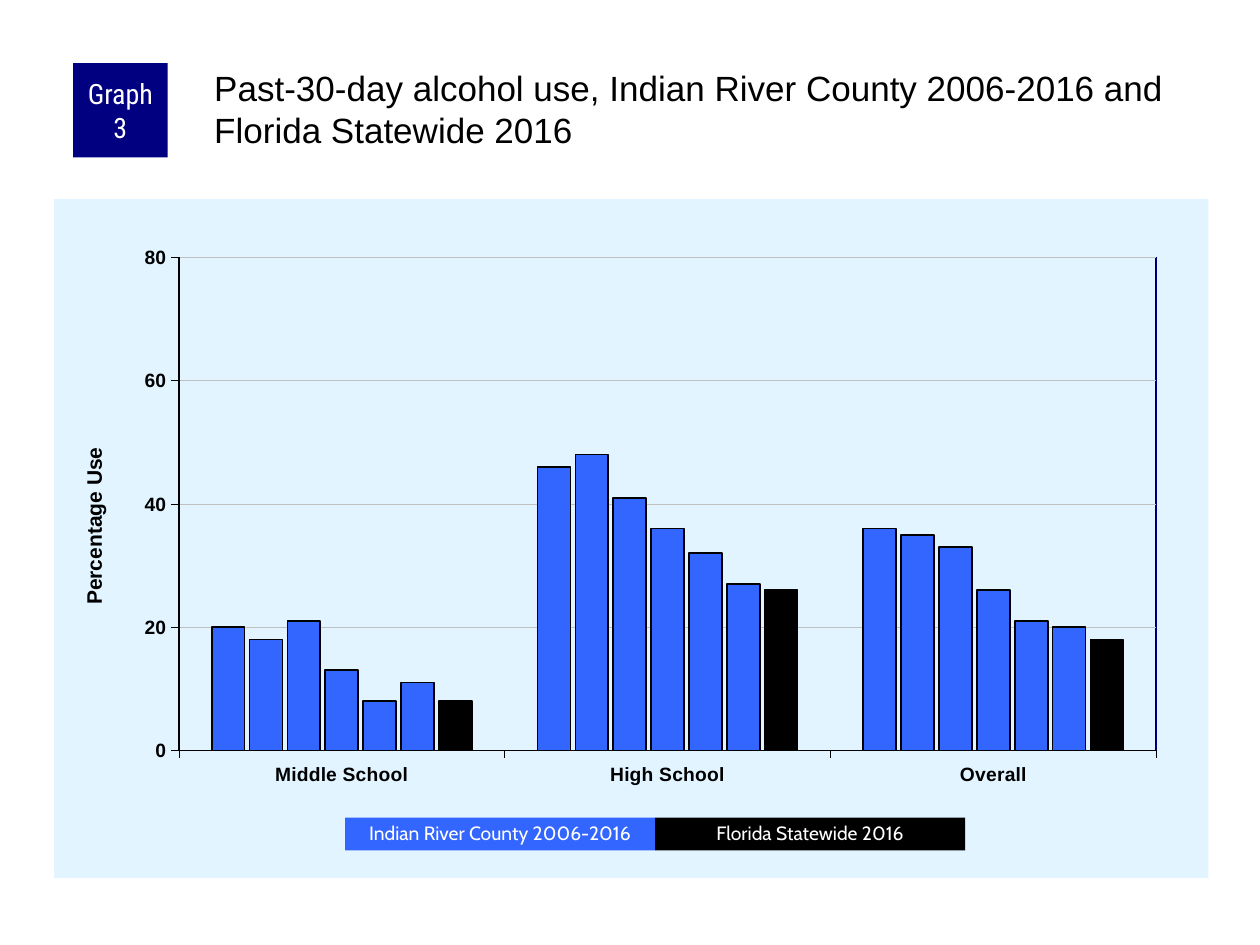
from lxml import etree
from pptx import Presentation
from pptx import util as u
from pptx.chart.data import CategoryChartData
from pptx.dml.color import RGBColor
from pptx.enum import chart as ch, shapes, text
from pptx.oxml import parse_xml
from pptx.oxml.ns import nsdecls, qn

W, H = 10, 7.5
CHART = (0.43, 1.58, 9.16, 5.39)
PLOT = (0.108, 0.086, 0.847, 0.726)
BLUE, BLACK, NAVY, PALE = "3366FF", "000000", "000080", "E1F4FF"
CATEGORIES = ["Middle School", "High School", "Overall"]
VALUES = [(20, 46, 36), (18, 48, 35), (21, 41, 33), (13, 36, 26),
          (8, 32, 21), (11, 27, 20), (8, 26, 18)]
KEYS = [("Indian River County 2006-2016", BLUE), ("Florida Statewide 2016", BLACK)]
KEY_LEFT, KEY_TOP, KEY_WIDTH, KEY_HEIGHT = 2.74, 6.49, 2.46, 0.26


def rgb(value):
    """Return the colour for a hex string."""
    return RGBColor.from_string(value)


def box(*lengths):
    """Convert lengths in inches to slide units."""
    return [u.Inches(n) for n in lengths]


def style(font, size, color, name, bold=False):
    """Set the look of a font."""
    font.size, font.name, font.bold = u.Pt(size), name, bold
    font.color.rgb = rgb(color)


def stroke(line, color, width):
    """Set the colour and width of a line."""
    line.color.rgb, line.width = rgb(color), u.Pt(width)


def set_margins(tf, left, top, right, bottom):
    """Set the insets of a text frame in inches."""
    tf.margin_left, tf.margin_top, tf.margin_right, tf.margin_bottom = box(
        left, top, right, bottom)


def add_title(s, title):
    """Place and format the title placeholder."""
    sp = s.shapes.title
    sp.left, sp.top, sp.width, sp.height = box(1.67, 0.5, 7.92, 0.83)
    tf = sp.text_frame
    tf.text = title
    tf.word_wrap, tf.auto_size = True, text.MSO_AUTO_SIZE.NONE
    tf.vertical_anchor = text.MSO_ANCHOR.TOP
    set_margins(tf, 0.03, 0.03, 0, 0)
    p = tf.paragraphs[0]
    p.alignment = text.PP_ALIGN.LEFT
    style(p.runs[0].font, 20, BLACK, "Arial")


def add_label(s, place, label, fill, size, font, spacing=1.0):
    """Add a filled rectangle with centred white text."""
    sp = s.shapes.add_shape(shapes.MSO_SHAPE.RECTANGLE, *box(*place))
    sp.shadow.inherit = False
    sp.fill.solid()
    sp.fill.fore_color.rgb = rgb(fill)
    sp.line.fill.background()
    tf = sp.text_frame
    tf.text = label
    tf.word_wrap, tf.vertical_anchor = True, text.MSO_ANCHOR.MIDDLE
    set_margins(tf, 0.05, 0, 0.05, 0)
    p = tf.paragraphs[0]
    p.alignment, p.line_spacing = text.PP_ALIGN.CENTER, spacing
    style(p.runs[0].font, size, "FFFFFF", font)


def set_layout(parent, index, target="", **shares):
    """Give a chart part a manual layout in shares of the chart."""
    for old in parent.findall(qn("c:layout")):
        parent.remove(old)
    inner = f'<c:layoutTarget val="{target}"/>' if target else ""
    modes = "".join(f'<c:{k}Mode val="edge"/>' for k in "xy")
    sizes = "".join(f'<c:{k} val="{v}"/>' for k, v in shares.items())
    parent.insert(index, parse_xml(
        f'<c:layout {nsdecls("c")}><c:manualLayout>{inner}{modes}{sizes}'
        '</c:manualLayout></c:layout>'))


def shape_props(fill, line):
    """Return chart shape properties with an optional fill and line."""
    def paint(color):
        return (f'<a:solidFill><a:srgbClr val="{color}"/></a:solidFill>'
                if color else "<a:noFill/>")
    return parse_xml(f'<c:spPr {nsdecls("c", "a")}>{paint(fill)}'
                     f'<a:ln w="12700">{paint(line)}</a:ln></c:spPr>')


def format_axis(axis):
    """Format the ticks, labels and line of an axis."""
    axis.major_tick_mark = ch.XL_TICK_MARK.OUTSIDE
    axis.minor_tick_mark = ch.XL_TICK_MARK.NONE
    style(axis.tick_labels.font, 11, BLACK, "Arial", True)
    stroke(axis.format.line, BLACK, 0.25)


def format_value_axis(axis):
    """Set the scale, gridlines and title of the value axis."""
    axis.minimum_scale, axis.maximum_scale, axis.major_unit = 0, 80, 20
    axis.has_major_gridlines = True
    stroke(axis.major_gridlines.format.line, "C0C0C0", 0.25)
    title = axis.axis_title
    title.text_frame.text = "Percentage Use"
    style(title.text_frame.paragraphs[0].runs[0].font, 12, BLACK, "Arial", True)
    set_layout(title._element, 1, x=0.02, y=0.36)


def add_usage_chart(s):
    """Add the clustered columns of alcohol use."""
    data = CategoryChartData()
    data.categories = CATEGORIES
    for n, values in enumerate(VALUES, 1):
        data.add_series(f"Series {n}", values)
    chart = s.shapes.add_chart(
        ch.XL_CHART_TYPE.COLUMN_CLUSTERED, *box(*CHART), data).chart
    chart.has_legend = chart.has_title = False
    style(chart.font, 8, BLACK, "Arial")
    plot = chart.plots[0]
    plot.gap_width, plot.overlap, plot.vary_by_categories = 200, -15, False
    for n, series in enumerate(plot.series, 1):
        series.format.fill.solid()
        series.format.fill.fore_color.rgb = rgb(BLACK if n == len(VALUES) else BLUE)
        stroke(series.format.line, BLACK, 1)
    format_axis(chart.category_axis)
    format_axis(chart.value_axis)
    format_value_axis(chart.value_axis)
    root = chart._chartSpace.find(qn("c:chart"))
    root.addnext(shape_props(PALE, None))
    area = root.find(qn("c:plotArea"))
    set_layout(area, 0, "inner", **dict(zip("xywh", PLOT)))
    area.append(shape_props(None, BLACK))


def add_right_edge(s):
    """Draw the navy right edge of the plot."""
    left, top, width, height = CHART
    x = left + width * (PLOT[0] + PLOT[2])
    y = top + height * PLOT[1]
    line = s.shapes.add_connector(
        shapes.MSO_CONNECTOR.STRAIGHT, *box(x, y, x, y + height * PLOT[3]))
    stroke(line.line, NAVY, 1)
    etree.SubElement(line._element.spPr, qn("a:effectLst"))


def main():
    """Build and save the slide."""
    prs = Presentation()
    prs.slide_width, prs.slide_height = box(W, H)
    s = prs.slides.add_slide(prs.slide_layouts[5])
    add_usage_chart(s)
    add_right_edge(s)
    add_label(s, (0.58, 0.5, 0.75, 0.75), "Graph 3", NAVY, 16, "Roboto Condensed")
    add_title(s, "Past-30-day alcohol use, Indian River County 2006-2016 "
                 "and Florida Statewide 2016")
    for column, (label, color) in enumerate(KEYS):
        place = (KEY_LEFT + column * KEY_WIDTH, KEY_TOP, KEY_WIDTH, KEY_HEIGHT)
        add_label(s, place, label, color, 11, "Cabin", 0.9)
    prs.save("out.pptx")


if __name__ == "__main__":
    main()
